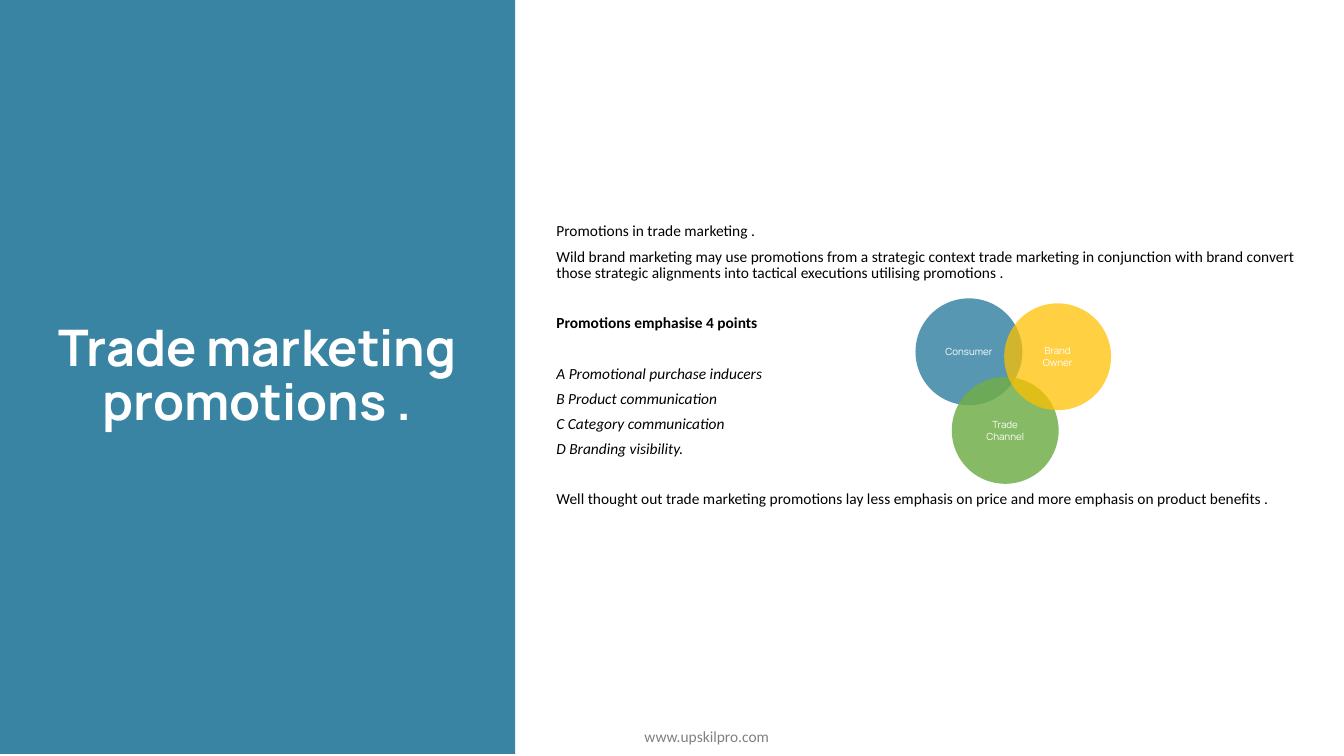
from dataclasses import dataclass

from lxml import etree
from pptx import Presentation
from pptx.dml.color import RGBColor
from pptx.enum.shapes import MSO_SHAPE
from pptx.enum.text import MSO_ANCHOR, PP_ALIGN
from pptx.oxml.ns import qn
from pptx.util import Inches, Pt

RECT = MSO_SHAPE.RECTANGLE
CIRCLE = MSO_SHAPE.FLOWCHART_CONNECTOR
MIDDLE, TOP = MSO_ANCHOR.MIDDLE, MSO_ANCHOR.TOP
CENTER, LEFT = PP_ALIGN.CENTER, PP_ALIGN.LEFT
SLIDE_W, SLIDE_H = Inches(13.33), Inches(7.5)


@dataclass(frozen=True)
class Theme:
    blue: str = "3984A3"
    green: str = "70AD47"
    gold: str = "FFC000"
    white: str = "FFFFFF"
    black: str = "000000"
    grey: str = "808080"
    heading: str = "Manrope"
    body: str = "Calibri"
    title_size: int = 36
    body_size: int = 11
    label_size: int = 7
    gap: int = 6
    section_gap: int = 18


T = Theme()
TITLE = {"name": T.heading, "size": Pt(T.title_size), "bold": True}
BODY = {"name": T.body, "size": Pt(T.body_size)}
LABEL = {"name": T.heading, "size": Pt(T.label_size)}

SECTIONS = [
    ({}, ["Promotions in trade marketing .",
          "Wild brand marketing may use promotions from a strategic context trade "
          "marketing in conjunction with brand convert those strategic alignments "
          "into tactical executions utilising promotions ."]),
    ({"bold": True}, ["Promotions emphasise 4 points"]),
    ({"italic": True}, ["A Promotional purchase inducers", "B Product communication",
                        "C Category communication", "D Branding visibility."]),
    ({}, ["Well thought out trade marketing promotions lay less emphasis on price "
          "and more emphasis on product benefits ."]),
]

CIRCLES = [
    ("Consumer", 68.12, 39.47, T.blue, 84),
    ("Trade Channel", 70.82, 49.87, T.green, 84),
    ("Brand Owner", 74.72, 40.13, T.gold, 74),
]
CIRCLE_SIZE = (7.95, 14.13)


def area(left, top, width, height):
    return [int(SLIDE_W * left / 100), int(SLIDE_H * top / 100),
            int(SLIDE_W * width / 100), int(SLIDE_H * height / 100)]


def apply(target, values):
    for key, value in values.items():
        setattr(target, key, value)


def write(p, text, font, color, **layout):
    apply(p, layout)
    r = p.add_run()
    r.text = text
    apply(r.font, font)
    r.font.color.rgb = RGBColor.from_string(color)


def add_filled(slide, kind, bounds, fill, opacity=100):
    sp = slide.shapes.add_shape(kind, *area(*bounds))
    sp.shadow.inherit = False
    sp.line.fill.background()
    sp.fill.solid()
    sp.fill.fore_color.rgb = RGBColor.from_string(fill)
    if opacity < 100:
        color = sp.fill._xPr.find(qn("a:solidFill"))[0]
        etree.SubElement(color, qn("a:alpha"), val=str(opacity * 1000))
    apply(sp.text_frame, {"word_wrap": True, "vertical_anchor": MIDDLE})
    return sp.text_frame


def add_text(slide, bounds, anchor):
    tf = slide.shapes.add_textbox(*area(*bounds)).text_frame
    apply(tf, {"word_wrap": True, "vertical_anchor": anchor})
    return tf


def add_sections(slide, bounds):
    tf = add_text(slide, bounds, TOP)
    for i, (style, lines) in enumerate(SECTIONS):
        for j, line in enumerate(lines):
            first = i == 0 and j == 0
            p = tf.paragraphs[0] if first else tf.add_paragraph()
            before = T.section_gap if i and j == 0 else 0
            write(p, line, BODY | style, T.black, alignment=LEFT, line_spacing=0.9,
                  space_before=Pt(before), space_after=Pt(T.gap))


def main():
    prs = Presentation()
    prs.slide_width, prs.slide_height = SLIDE_W, SLIDE_H
    slide = prs.slides.add_slide(prs.slide_layouts[6])

    tf = add_text(slide, (35.71, 94.67, 33.76, 5.33), MIDDLE)
    write(tf.paragraphs[0], "www.upskilpro.com", BODY, T.grey, alignment=CENTER,
          space_after=Pt(T.gap))

    add_sections(slide, (40.66, 28.93, 56.49, 42))

    for label, left, top, fill, opacity in CIRCLES:
        tf = add_filled(slide, CIRCLE, (left, top, *CIRCLE_SIZE), fill, opacity)
        write(tf.paragraphs[0], label, LABEL, T.white, alignment=CENTER)

    tf = add_filled(slide, RECT, (0, 0, 38.33, 99.73), T.blue)
    write(tf.paragraphs[0], "Trade marketing promotions .", TITLE, T.white,
          alignment=CENTER, line_spacing=0.9)

    prs.save("out.pptx")


if __name__ == "__main__":
    main()
